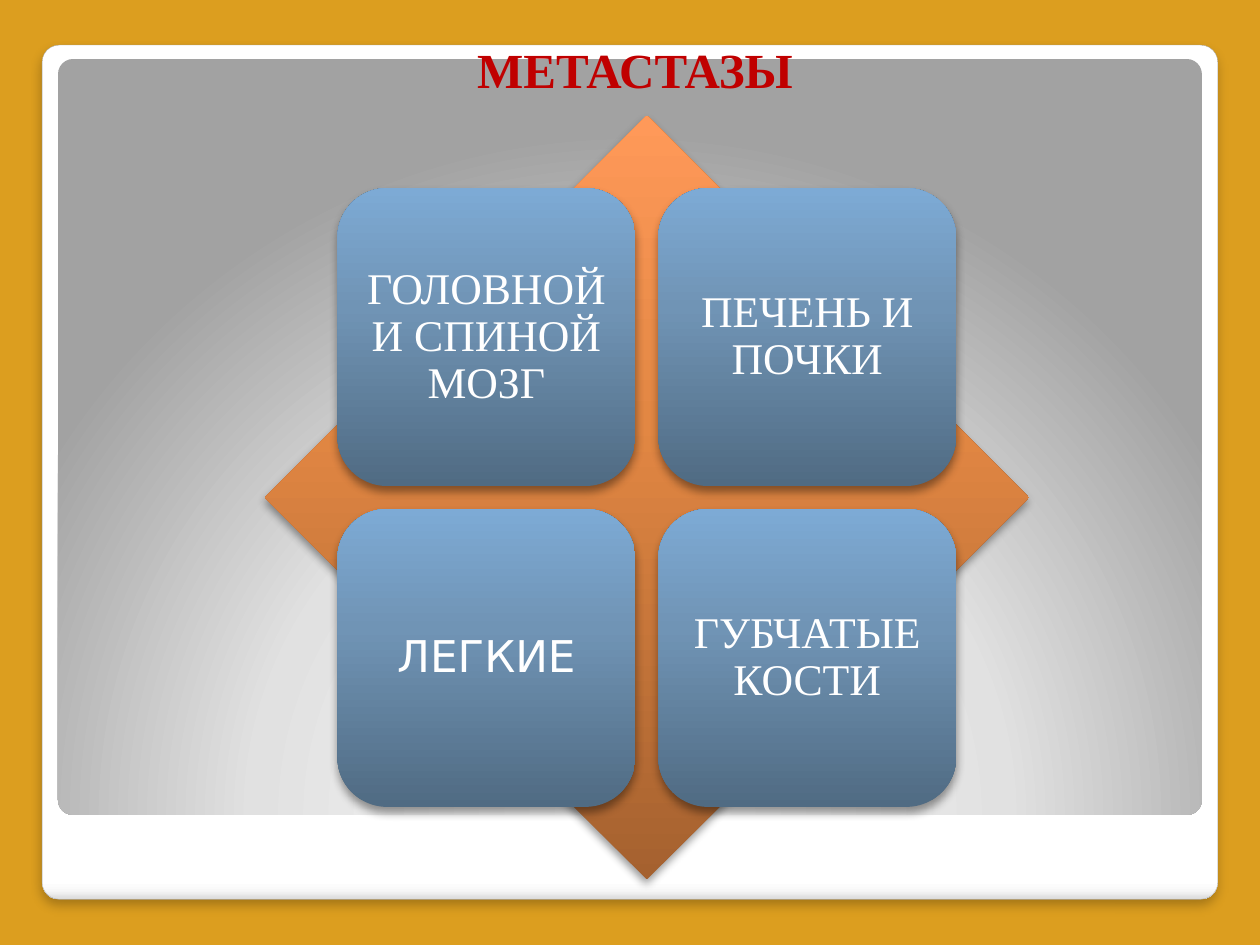
from lxml import etree
from pptx import Presentation
from pptx.dml.color import RGBColor
from pptx.enum import shapes, text
from pptx.oxml.ns import qn
from pptx.util import Cm, Pt

COLORS = {
    "background": "DC9E1F", "white": "FFFFFF", "frame_line": "A4A4A4",
    "title": "C00000", "shadow": "000000",
}
# Gradient stops: (position in percent, colour)
GRADIENTS = {
    "frame": [(0, "FFFFFF"), (98, "FFFFFF"), (99, "F7F7F7"), (100, "DADADA")],
    "panel": [(0, "FFFFFF"), (55, "E1E1E1"), (100, "A2A2A2")],
    "diamond": [(0, "A5612F"), (60, "E28743"), (100, "FF9959")],
    "card": [(0, "506B83"), (60, "7094B5"), (100, "7DAAD5")],
}
SERIF, SANS = "Times New Roman", "DejaVu Sans"
ORGANS = [
    ("ГОЛОВНОЙ И СПИНОЙ МОЗГ", SERIF), ("ПЕЧЕНЬ И ПОЧКИ", SERIF),
    ("ЛЕГКИЕ", SANS), ("ГУБЧАТЫЕ КОСТИ", SERIF),
]


def rgb(name):
    return RGBColor.from_string(COLORS[name])


def add_node(parent, tag, **attributes):
    values = {key: str(value) for key, value in attributes.items()}
    return etree.SubElement(parent, qn(tag), values)


def add_color(parent, color, opacity=None):
    node = add_node(parent, "a:srgbClr", val=color)
    if opacity is not None:
        add_node(node, "a:alpha", val=opacity * 1000)


def set_gradient(shape, stops, angle=None):
    """Linear gradient at an angle, or radial from below when there is none."""
    shape.fill.gradient()
    gradient = shape._element.spPr.find(qn("a:gradFill"))
    for child in list(gradient):
        gradient.remove(child)
    stop_list = add_node(gradient, "a:gsLst")
    for position, color in stops:
        add_color(add_node(stop_list, "a:gs", pos=position * 1000), color)
    if angle is not None:
        add_node(gradient, "a:lin", ang=angle * 60000, scaled=0)
    else:
        circle = add_node(gradient, "a:path", path="circle")
        add_node(circle, "a:fillToRect", l=50000, t=175000, r=50000, b=-75000)


def set_shadow(shape, opacity, blur, distance):
    effects = shape._element.spPr.find(qn("a:effectLst"))
    shadow = add_node(effects, "a:outerShdw", blurRad=Pt(blur), dist=Pt(distance),
                      dir=90 * 60000, algn="ctr", rotWithShape=0)
    add_color(shadow, COLORS["shadow"], opacity)


def add_filled(parent, kind, box, gradient, angle=None):
    shape = parent.shapes.add_shape(kind, *(Cm(length) for length in box))
    shape.shadow.inherit = False
    shape.line.fill.background()
    set_gradient(shape, GRADIENTS[gradient], angle)
    return shape


def write_text(shape, words, paragraph_format, font_format):
    shape.text_frame.text = words
    paragraph = shape.text_frame.paragraphs[0]
    for name, value in paragraph_format.items():
        setattr(paragraph, name, value)
    font = paragraph.runs[0].font
    for name, value in font_format.items():
        if name == "color":
            font.color.rgb = rgb(value)
        else:
            setattr(font, name, value)


def add_backdrop(slide, box):
    """White frame with a grey panel inside it."""
    left, top, width, height = box
    rounded = shapes.MSO_SHAPE.ROUNDED_RECTANGLE
    frame = add_filled(slide, rounded, box, "frame", 90)
    frame.line.color.rgb = rgb("frame_line")
    frame.line.width = Pt(0.16)
    set_shadow(frame, 25, 6, 4)

    inset = 0.32
    panel_box = (left + inset, top + 0.28, width - 2 * inset, height - 1.98)
    panel = add_filled(slide, rounded, panel_box, "panel")
    for part in (frame, panel):
        part.adjustments[0] = 0.02


def add_title(slide, box, words):
    title = slide.shapes.title
    slide.shapes._spTree.append(title._element)  # in front of the backdrop
    title.left, title.top, title.width, title.height = (Cm(n) for n in box)
    title.text_frame.vertical_anchor = text.MSO_ANCHOR.BOTTOM
    write_text(title, words, {"alignment": text.PP_ALIGN.CENTER},
               {"name": SERIF, "size": Pt(28), "bold": True, "color": "title"})


def add_matrix(slide, box, organs):
    """Diamond with a two-by-two grid of cards centred on it."""
    left, top, side = box
    matrix = slide.shapes.add_group_shape()
    diamond = add_filled(matrix, shapes.MSO_SHAPE.DIAMOND,
                         (left, top, side, side), "diamond", 270)
    set_shadow(diamond, 40, 5.2, 3)

    card_side = side * 0.39
    margin = side * 0.095
    step = side - 2 * margin - card_side
    for index, (organ, font_name) in enumerate(organs):
        row, column = divmod(index, 2)
        card_box = (left + margin + column * step, top + margin + row * step,
                    card_side, card_side)
        card = add_filled(matrix, shapes.MSO_SHAPE.ROUNDED_RECTANGLE,
                          card_box, "card", 270)
        set_shadow(card, 40, 5.2, 3)
        frame_format = {"word_wrap": True, "vertical_anchor": text.MSO_ANCHOR.MIDDLE}
        for edge in ("left", "top", "right", "bottom"):
            frame_format["margin_" + edge] = Cm(0.25)
        for name, value in frame_format.items():
            setattr(card.text_frame, name, value)
        write_text(card, organ,
                   {"alignment": text.PP_ALIGN.CENTER, "line_spacing": 0.9},
                   {"name": font_name, "size": Pt(25), "color": "white"})


def main():
    deck = Presentation()
    deck.slide_width, deck.slide_height = Cm(25.4), Cm(19.05)
    slide = deck.slides.add_slide(deck.slide_layouts[5])
    slide.background.fill.solid()
    slide.background.fill.fore_color.rgb = rgb("background")

    add_backdrop(slide, (0.85, 0.91, 23.7, 17.22))
    add_title(slide, (0.2, 0.2, 25.2, 1.9), "МЕТАСТАЗЫ")
    add_matrix(slide, (5.34, 2.33, 15.4), ORGANS)
    deck.save("out.pptx")


if __name__ == "__main__":
    main()
